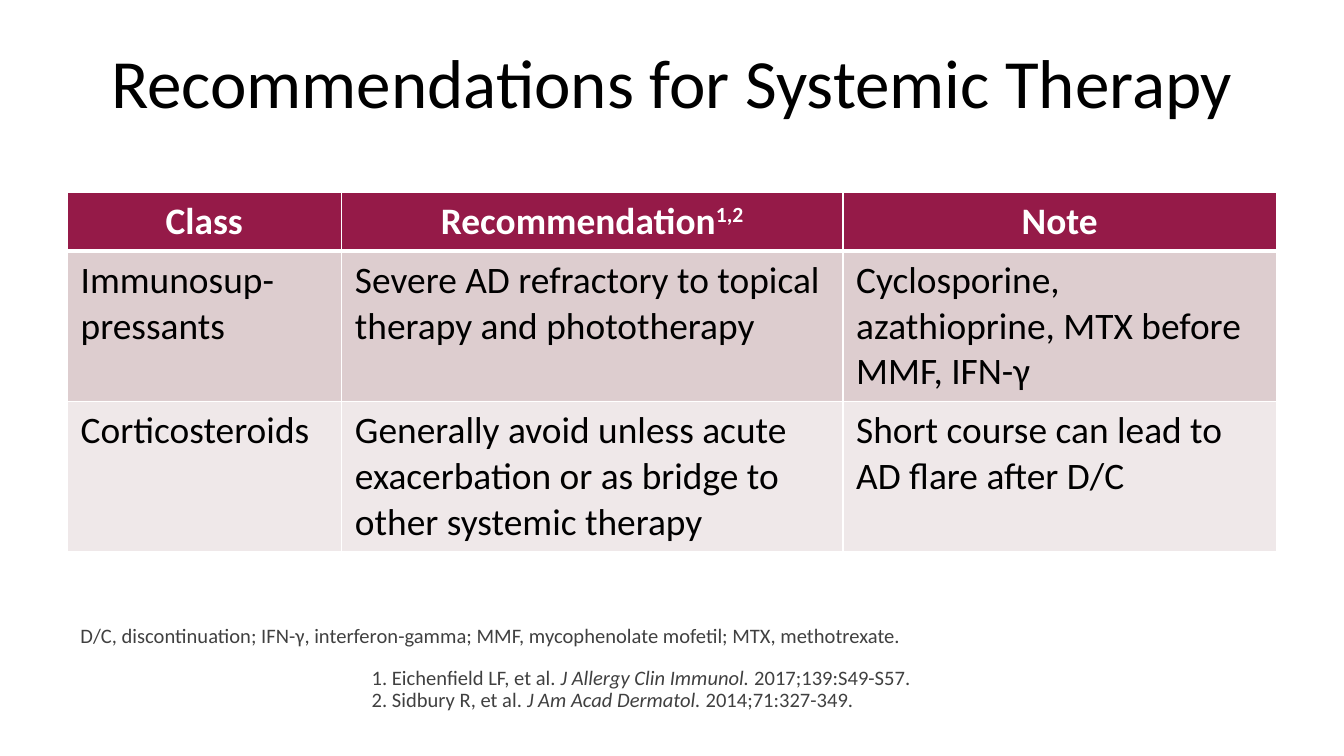
from dataclasses import dataclass

from lxml.etree import SubElement
from pptx import Presentation
from pptx.dml.color import RGBColor
from pptx.enum.text import MSO_ANCHOR as Anchor, MSO_AUTO_SIZE as AutoSize, PP_ALIGN as Align
from pptx.oxml.ns import qn
from pptx.util import Emu, Pt

PX = 9525  # 96 px to the inch


@dataclass(frozen=True)
class Theme:
    font: str = "Calibri"
    black: str = "000000"
    white: str = "FFFFFF"
    grey: str = "404040"
    header: str = "951A48"
    bands: tuple[str, str] = ("DDCDCF", "EFE8E9")
    title_size: int = 37
    table_size: int = 20
    note_size: int = 11


@dataclass(frozen=True)
class Span:
    text: str
    italic: bool = False
    superscript: bool = False


@dataclass(frozen=True)
class Box:
    left: int
    top: int
    width: int
    height: int

    def emu(self) -> tuple[Emu, ...]:
        return tuple(Emu(v * PX) for v in (self.left, self.top, self.width, self.height))


@dataclass(frozen=True)
class Note:
    box: Box
    lines: list[list[Span]]


THEME = Theme()
SLIDE_SIZE = (960, 540)
TITLE_BOX = Box(48, 13, 864, 90)
TABLE_BOX = Box(48, 137, 864, 253)
COLUMNS = (196, 358, 310)
ROWS = (39, 107, 107)

TABLE = [
    [[Span("Class")],
     [Span("Recommendation"), Span("1,2", superscript=True)],
     [Span("Note")]],
    [[Span("Immunosup-pressants")],
     [Span("Severe AD refractory to topical therapy and phototherapy")],
     [Span("Cyclosporine, azathioprine, MTX before MMF, IFN-γ")]],
    [[Span("Corticosteroids")],
     [Span("Generally avoid unless acute exacerbation or as bridge to other systemic therapy")],
     [Span("Short course can lead to AD flare after D/C")]],
]

ABBREVIATIONS = Note(Box(48, 442, 864, 21), [
    [Span("D/C, discontinuation; IFN-γ, interferon-gamma; MMF, mycophenolate mofetil; "
          "MTX, methotrexate.")],
])
REFERENCES = Note(Box(256, 472, 656, 62), [
    [Span("1. Eichenfield LF, et al. "), Span("J Allergy Clin Immunol.", italic=True),
     Span(" 2017;139:S49-S57.")],
    [Span("2. Sidbury R, et al. "), Span("J Am Acad Dermatol.", italic=True),
     Span(" 2014;71:327-349.")],
])


def write_spans(p, spans: list[Span], size: int, color: str, bold: bool = False) -> None:
    for span in spans:
        r = p.add_run()
        r.text = span.text
        font = r.font
        font.name, font.size, font.bold, font.italic = THEME.font, Pt(size), bold, span.italic
        font.color.rgb = RGBColor.from_string(color)
        if span.superscript:
            r._r.get_or_add_rPr().set("baseline", "30000")


def set_borders(cell, bottom: int) -> None:
    tc_pr = cell._tc.get_or_add_tcPr()
    widths = {"lnL": 1, "lnR": 1, "lnT": 1, "lnB": bottom}
    for i, (side, width) in enumerate(widths.items()):
        ln = SubElement(tc_pr, qn(f"a:{side}"), w=str(Pt(width)))
        fill = SubElement(ln, qn("a:solidFill"))
        SubElement(fill, qn("a:srgbClr"), val=THEME.white)
        tc_pr.insert(i, ln)  # borders come before the fill


def add_title(s, text: str) -> None:
    sp = s.shapes.title
    sp.left, sp.top, sp.width, sp.height = TITLE_BOX.emu()
    tf = sp.text_frame
    tf.word_wrap, tf.auto_size, tf.vertical_anchor = True, AutoSize.NONE, Anchor.MIDDLE
    p = tf.paragraphs[0]
    p.alignment = Align.CENTER
    write_spans(p, [Span(text)], THEME.title_size, THEME.black)


def add_recommendations(s) -> None:
    table = s.shapes.add_table(len(ROWS), len(COLUMNS), *TABLE_BOX.emu()).table
    for column, width in zip(table.columns, COLUMNS):
        column.width = Emu(width * PX)
    for row, height in zip(table.rows, ROWS):
        row.height = Emu(height * PX)
    for i, row in enumerate(TABLE):
        is_header = i == 0
        fill = THEME.header if is_header else THEME.bands[(i - 1) % 2]
        color = THEME.white if is_header else THEME.black
        for j, spans in enumerate(row):
            cell = table.cell(i, j)
            cell.fill.solid()
            cell.fill.fore_color.rgb = RGBColor.from_string(fill)
            p = cell.text_frame.paragraphs[0]
            p.alignment = Align.CENTER if is_header else Align.LEFT
            write_spans(p, spans, THEME.table_size, color, bold=is_header)
            set_borders(cell, bottom=3 if is_header else 1)


def add_note(s, note: Note) -> None:
    tf = s.shapes.add_textbox(*note.box.emu()).text_frame
    tf.word_wrap = True
    for i, spans in enumerate(note.lines):
        p = tf.add_paragraph() if i else tf.paragraphs[0]
        p.line_spacing = 0.9
        write_spans(p, spans, THEME.note_size, THEME.grey)


def main() -> None:
    prs = Presentation()
    prs.slide_width, prs.slide_height = (Emu(v * PX) for v in SLIDE_SIZE)
    s = prs.slides.add_slide(prs.slide_layouts[5])  # title only

    # Title and table
    add_title(s, "Recommendations for Systemic Therapy")
    add_recommendations(s)

    # Footnotes
    for note in (REFERENCES, ABBREVIATIONS):
        add_note(s, note)

    prs.save("out.pptx")


if __name__ == "__main__":
    main()
